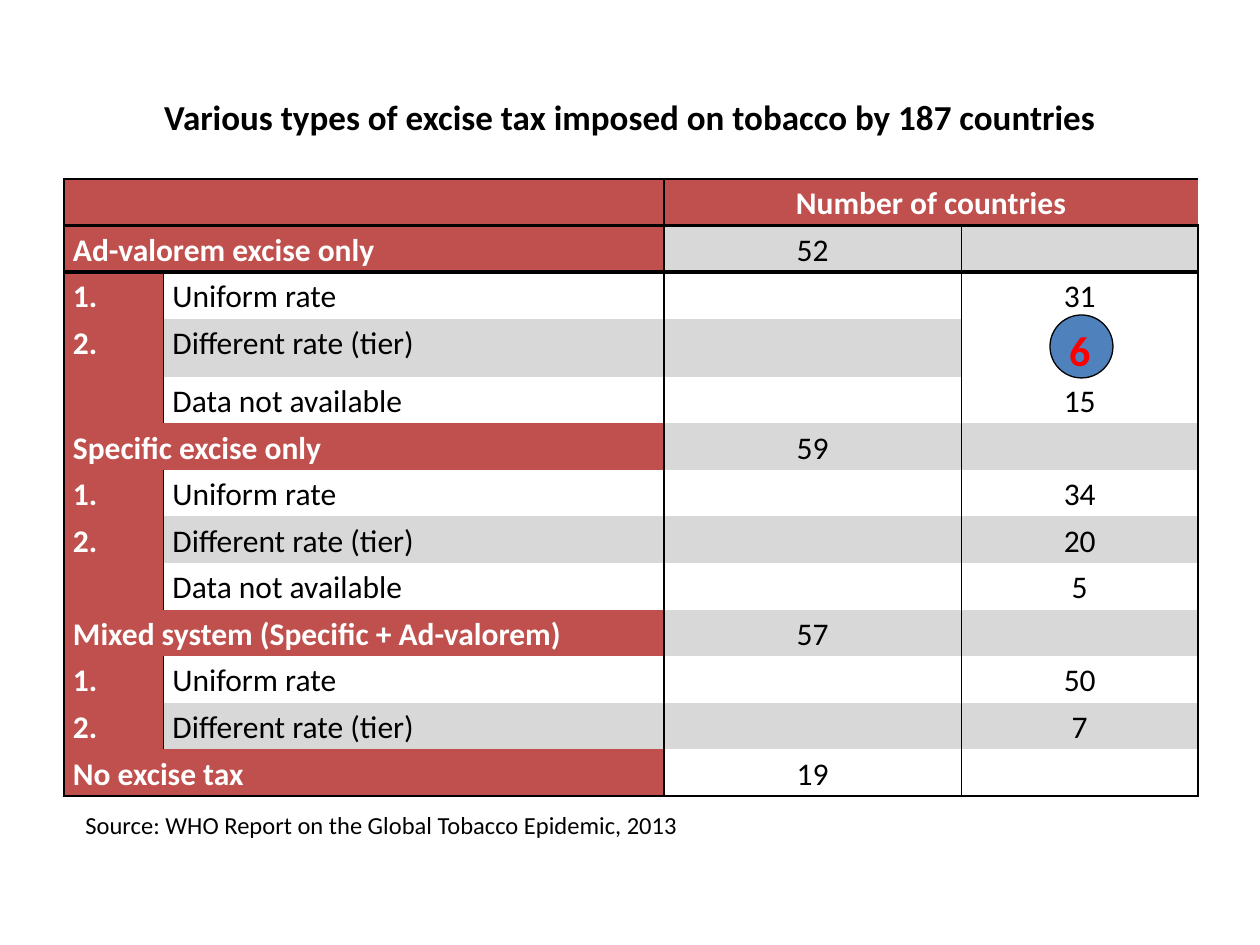
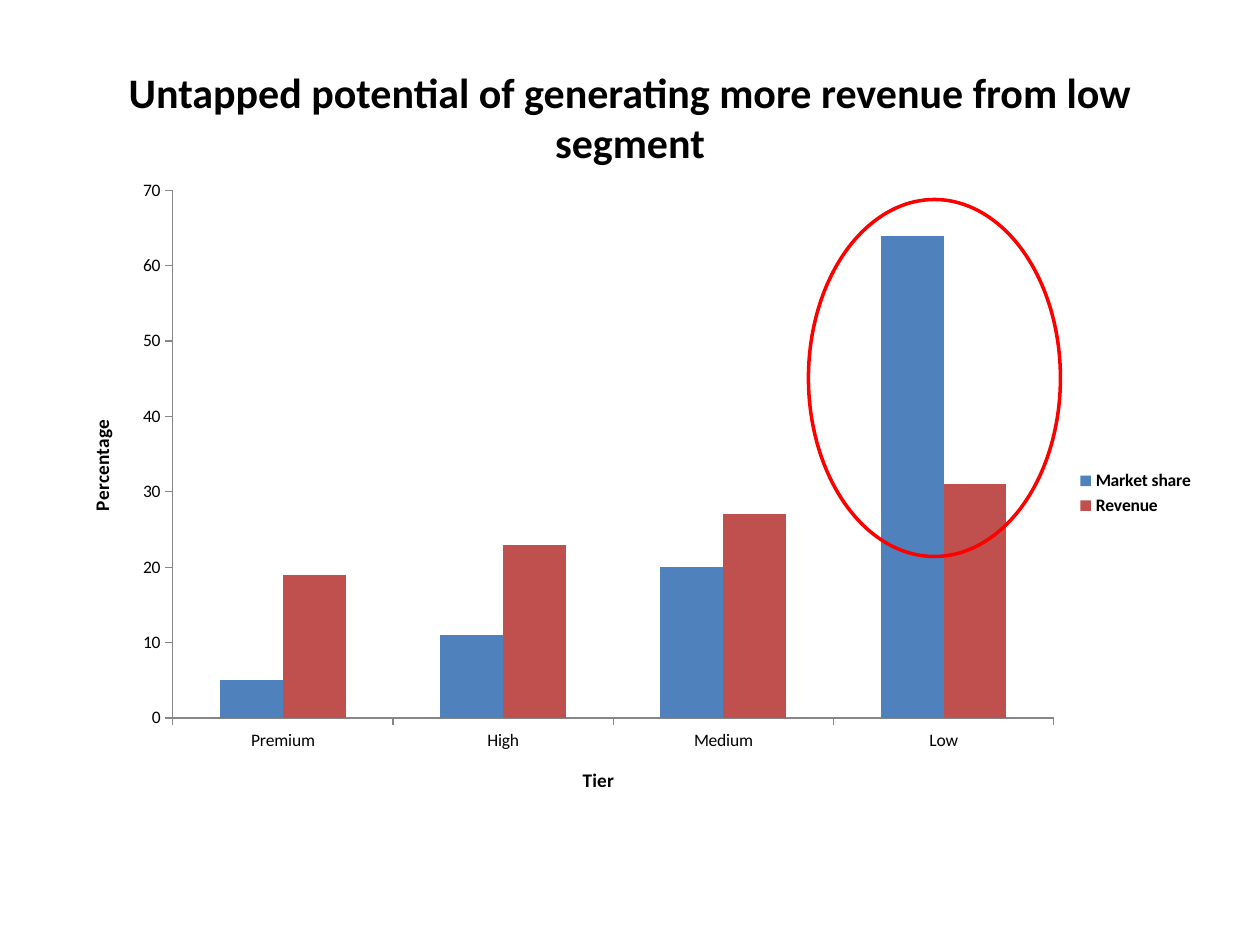
from lxml.etree import SubElement
from pptx import Presentation
from pptx.chart.data import CategoryChartData
from pptx.dml.color import RGBColor
from pptx.enum.chart import XL_CHART_TYPE, XL_LEGEND_POSITION, XL_TICK_MARK
from pptx.enum.shapes import MSO_SHAPE
from pptx.enum.text import MSO_ANCHOR, PP_ALIGN
from pptx.oxml import parse_xml
from pptx.oxml.ns import nsdecls, qn
from pptx.util import Pt

FONT = "Calibri"
BLACK = RGBColor(0, 0, 0)
WHITE = RGBColor(255, 255, 255)
RED = RGBColor(255, 0, 0)
BLUE = RGBColor(0x4F, 0x81, 0xBD)
BRICK = RGBColor(0xC0, 0x50, 0x4D)
SILVER = RGBColor(0xD8, 0xD8, 0xD8)
GRAY = RGBColor(0x86, 0x86, 0x86)

TITLE_BOX = (36, 21.6, 648, 90)
NO_STYLE = "{2D5ABB26-0587-4C30-8999-92F81FD0307C}"
WIDTHS = (56.88, 285.84, 169.92, 135.36)
ROW = 26.64
TIER_ROW = 3
ROWS = (
    ("", None, "Number of countries", None),
    ("Ad-valorem excise only", None, "52", ""),
    ("1.", "Uniform rate", "", "31"),
    ("2.", "Different rate (tier)", "", "6"),
    ("", "Data not available", "", "15"),
    ("Specific excise only", None, "59", ""),
    ("1.", "Uniform rate", "", "34"),
    ("2.", "Different rate (tier)", "", "20"),
    ("", "Data not available", "", "5"),
    ("Mixed system (Specific + Ad-valorem)", None, "57", ""),
    ("1.", "Uniform rate", "", "50"),
    ("2.", "Different rate (tier)", "", "7"),
    ("No excise tax", None, "19", ""),
)


def style(font, size, color=BLACK, bold=False):
    """Set the face, size, colour and weight of a font."""
    font.name, font.size, font.bold = FONT, Pt(size), bold
    font.color.rgb = color


def add_text(slide, box, text, size, bold=False, align=PP_ALIGN.LEFT,
             anchor=MSO_ANCHOR.TOP, wrap=True):
    """Add one styled line of text in a box."""
    frame = slide.shapes.add_textbox(*map(Pt, box)).text_frame
    frame.word_wrap, frame.vertical_anchor = wrap, anchor
    para = frame.paragraphs[0]
    para.text, para.alignment = text, align
    style(para.font, size, bold=bold)


def add_title(slide, text, size):
    """Add the centred bold title."""
    add_text(slide, TITLE_BOX, text, size, True, PP_ALIGN.CENTER, MSO_ANCHOR.MIDDLE)


def add_oval(slide, box, line, width, fill=None):
    """Add an outlined ellipse, filled if a fill is given."""
    oval = slide.shapes.add_shape(MSO_SHAPE.OVAL, *map(Pt, box))
    oval.shadow.inherit = False
    oval.line.color.rgb, oval.line.width = line, Pt(width)
    if fill is None:
        oval.fill.background()
    else:
        oval.fill.solid()
        oval.fill.fore_color.rgb = fill


def add_edge(cell, side, width):
    """Draw one black cell border."""
    props = cell._tc.get_or_add_tcPr()
    line = SubElement(props, qn(f"a:ln{side}"), w=str(Pt(width)))
    fill = SubElement(line, qn("a:solidFill"))
    SubElement(fill, qn("a:srgbClr"), val=str(BLACK))


def fill_cell(cell, row, col, text):
    """Set the borders, fill and text of one table cell."""
    cell.margin_left = cell.margin_right = Pt(5)
    cell.margin_top = cell.margin_bottom = 0
    if text is not None:
        add_edge(cell, "L", 1)
    if col in (1, 3) or ROWS[row][col + 1] is not None:
        add_edge(cell, "R", 1)
    if row < 2:
        add_edge(cell, "T", 2.25 if row else 1)
    if row in (0, len(ROWS) - 1):
        add_edge(cell, "B", 1 if row else 2.25)
    head = row == 0 or col == 0 or text is None
    tier = (row, col) == (TIER_ROW, 3)
    if head or (row % 2 and not tier):
        cell.fill.solid()
        cell.fill.fore_color.rgb = BRICK if head else SILVER
    else:
        cell.fill.background()
    if text:
        para = cell.text_frame.paragraphs[0]
        para.text, para.line_spacing = text, 1.15
        para.alignment = PP_ALIGN.CENTER if col > 1 else PP_ALIGN.LEFT
        color = RED if tier else WHITE if head else BLACK
        style(para.font, 24 if tier else 18, color, head or tier)


def add_grid(slide, left, top):
    """Add the table of excise types."""
    frame = slide.shapes.add_table(len(ROWS), len(WIDTHS), Pt(left), Pt(top),
                                   Pt(sum(WIDTHS)), Pt(ROW * len(ROWS)))
    table = frame.table
    table._tbl.tblPr.find(qn("a:tableStyleId")).text = NO_STYLE
    table.first_row = table.horz_banding = False
    for column, width in zip(table.columns, WIDTHS):
        column.width = Pt(width)
    for row, texts in enumerate(ROWS):
        table.rows[row].height = Pt(ROW)
        for col, text in enumerate(texts):
            if text is None:
                table.cell(row, col - 1).merge(table.cell(row, col))
            fill_cell(table.cell(row, col), row, col, text)


def set_axis(axis, title):
    """Style one chart axis and its title."""
    axis.has_major_gridlines = False
    axis.major_tick_mark = XL_TICK_MARK.OUTSIDE
    axis.format.line.color.rgb = GRAY
    style(axis.tick_labels.font, 10)
    axis.has_title = True
    para = axis.axis_title.text_frame.paragraphs[0]
    para.text = title
    style(para.font, 11, bold=True)


def set_plot(chart, x, y, w, h):
    """Fix the inner plot area as shares of the chart."""
    area = chart.element.xpath("//c:plotArea")[0]
    old = area.find(qn("c:layout"))
    if old is not None:
        area.remove(old)
    layout = parse_xml(f"<c:layout {nsdecls('c')}/>")
    manual = SubElement(layout, qn("c:manualLayout"))
    parts = dict(layoutTarget="inner", xMode="edge", yMode="edge", x=x, y=y, w=w, h=h)
    for name, value in parts.items():
        SubElement(manual, qn(f"c:{name}"), val=str(value))
    area.insert(0, layout)


def add_bars(slide, box):
    """Add the chart of market share and revenue by tier."""
    data = CategoryChartData()
    data.categories = ("Premium", "High", "Medium", "Low")
    data.add_series("Market share", (5, 11, 20, 64))
    data.add_series("Revenue", (19, 23, 27, 31))
    chart = slide.shapes.add_chart(XL_CHART_TYPE.COLUMN_CLUSTERED,
                                   *map(Pt, box), data).chart
    style(chart.font, 10)
    chart.has_title = False
    plot = chart.plots[0]
    plot.gap_width, plot.overlap, plot.vary_by_categories = 150, 0, False
    for series, color in zip(plot.series, (BLUE, BRICK)):
        series.format.fill.solid()
        series.format.fill.fore_color.rgb = color
    set_axis(chart.category_axis, "Tier")
    scale = chart.value_axis
    set_axis(scale, "Percentage")
    scale.minimum_scale, scale.maximum_scale, scale.major_unit = 0, 70, 10
    chart.has_legend = True
    chart.legend.position = XL_LEGEND_POSITION.RIGHT
    chart.legend.include_in_layout = False
    style(chart.legend.font, 10, bold=True)
    set_plot(chart, 0.096, 0.035, 0.77, 0.81)


def tax_slide(slide):
    """Build the slide of excise types."""
    add_oval(slide, (600, 180, 36, 36), BLACK, 0.75, BLUE)
    add_title(slide, "Various types of excise tax imposed on tobacco by 187 countries", 20)
    add_grid(slide, 36.72, 102.24)
    add_text(slide, (41.76, 459.36, 426.24, 24.48),
             "Source: WHO Report on the Global Tobacco Epidemic, 2013", 14, wrap=False)


def tier_slide(slide):
    """Build the slide of revenue by tier."""
    add_title(slide, "Untapped potential of generating more revenue from low segment", 24)
    add_bars(slide, (36, 95.76, 653.76, 372.24))
    add_oval(slide, (462, 114, 144, 204), RED, 2)


def main():
    """Build and save the deck."""
    deck = Presentation()
    deck.slide_width, deck.slide_height = Pt(720), Pt(540)
    for build in (tax_slide, tier_slide):
        build(deck.slides.add_slide(deck.slide_layouts[6]))
    deck.save("out.pptx")


if __name__ == "__main__":
    main()
